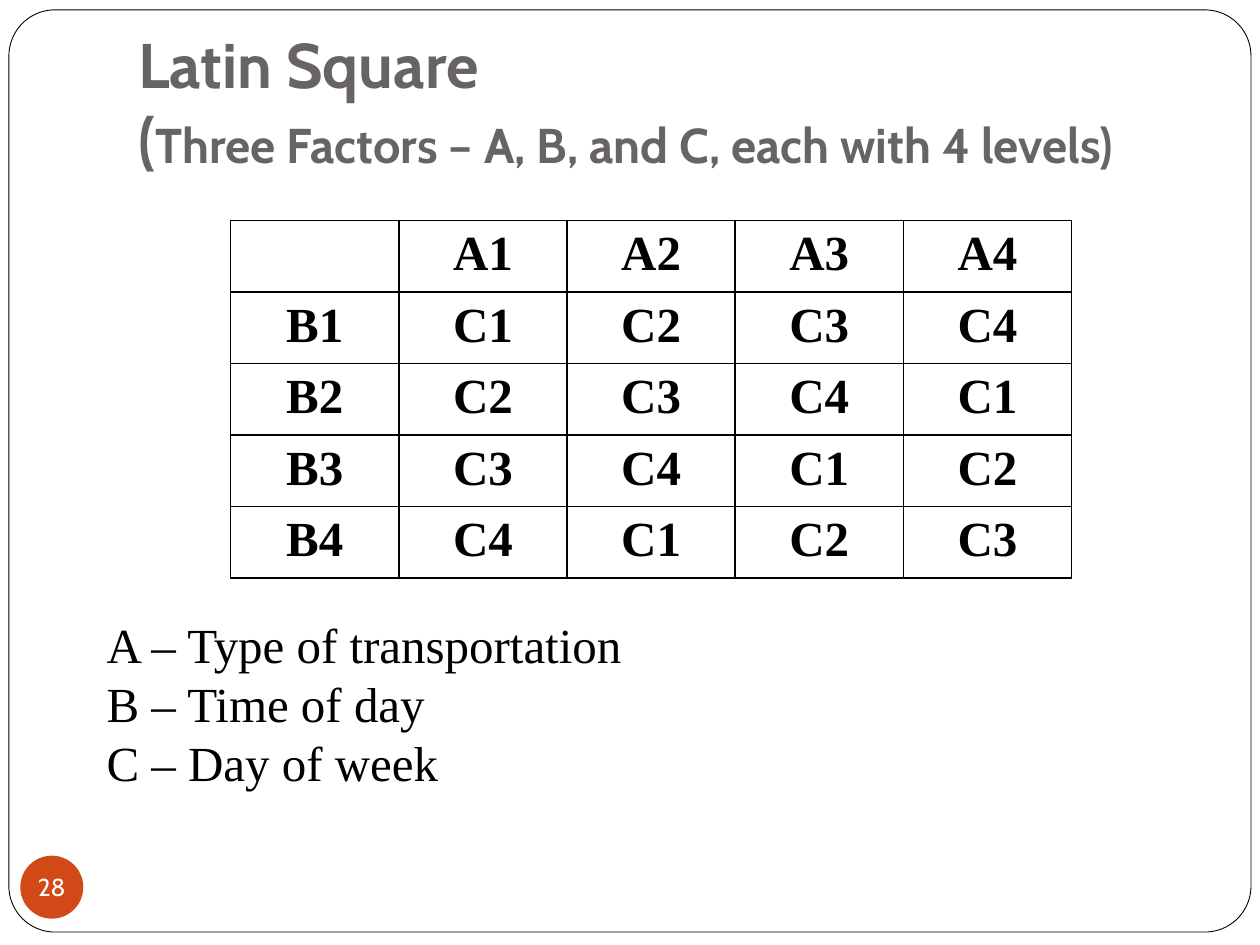
"""Build a slide that shows a Latin square for three factors with four levels each."""
from dataclasses import dataclass

from lxml.etree import SubElement
from pptx import Presentation
from pptx.dml.color import RGBColor as Color
from pptx.enum.shapes import MSO_SHAPE as Shape
from pptx.enum.text import MSO_ANCHOR as Anchor, PP_ALIGN as Align
from pptx.oxml.ns import qn
from pptx.util import Cm, Pt

LEVELS = 4
HEADING = [[("Latin Square\n(", 36), ("Three Factors – A, B, and C, each with 4 levels)", 27.9)]]
FACTORS = ["A – Type of transportation", "B – Time of day", "C – Day of week"]
PAGE_NUMBER = "28"


@dataclass(frozen=True)
class Theme:
    """Colours, fonts and type sizes of the slide."""
    paper: str = "FFFFFF"
    ink: str = "000000"
    title: str = "696464"
    accent: str = "D34817"
    sans: str = "Cabin"
    serif: str = "Times New Roman"
    body: float = 28
    number: float = 14


THEME = Theme()


def latin_square(levels):
    """Return the table rows, each shifted by one level from the row above."""
    header = [""] + [f"A{i + 1}" for i in range(levels)]
    rows = [[f"B{r + 1}"] + [f"C{(r + c) % levels + 1}" for c in range(levels)]
            for r in range(levels)]
    return [header] + rows


def write(frame, paragraphs, *, font, color, bold=False, align=Align.LEFT,
          anchor=Anchor.TOP, wrap=True, margins=None):
    """Fill a text frame with paragraphs made of (text, size) spans."""
    frame.word_wrap = wrap
    frame.vertical_anchor = anchor
    if margins:
        frame.margin_left, frame.margin_top, frame.margin_right, frame.margin_bottom = map(Cm, margins)
    for index, spans in enumerate(paragraphs):
        para = frame.add_paragraph() if index else frame.paragraphs[0]
        para.alignment = align
        for text, size in spans:
            for number, line in enumerate(text.split("\n")):
                if number:
                    para.add_line_break()
                span = para.add_run()
                span.text = line
                span.font.name, span.font.size, span.font.bold = font, Pt(size), bold
                span.font.color.rgb = Color.from_string(color)


def add_box(page, left, top, width, height):
    """Add a text box placed in centimetres."""
    return page.shapes.add_textbox(Cm(left), Cm(top), Cm(width), Cm(height))


def add_panel(page, kind, left, top, width, height, fill, line=None):
    """Add a flat filled shape with an optional outline."""
    panel = page.shapes.add_shape(kind, Cm(left), Cm(top), Cm(width), Cm(height))
    panel.shadow.inherit = False
    panel.fill.solid()
    panel.fill.fore_color.rgb = Color.from_string(fill)
    if line:
        panel.line.color.rgb = Color.from_string(line)
        panel.line.width = Pt(0.5)
    else:
        panel.line.fill.background()
    return panel


def add_borders(cell, color, width):
    """Draw a solid line on the four sides of a table cell."""
    properties = cell._tc.get_or_add_tcPr()
    for side in ("lnL", "lnR", "lnT", "lnB"):
        line = SubElement(properties, qn(f"a:{side}"), w=str(Pt(width)))
        SubElement(SubElement(line, qn("a:solidFill")), qn("a:srgbClr"), val=color)


def add_grid(page, rows, left, top, column, row):
    """Add a bordered table with equal columns and equal rows."""
    count = len(rows)
    table = page.shapes.add_table(count, count, Cm(left), Cm(top),
                                  Cm(column * count), Cm(row * count)).table
    table.first_row = table.horz_banding = False
    for r, labels in enumerate(rows):
        for c, label in enumerate(labels):
            cell = table.cell(r, c)
            add_borders(cell, THEME.ink, 1)
            cell.fill.background()
            if label:
                write(cell.text_frame, [[(label, THEME.body)]], font=THEME.serif,
                      color=THEME.ink, bold=True, align=Align.CENTER)


def main():
    """Place every part on the slide and save the deck."""
    deck = Presentation()
    deck.slide_width, deck.slide_height = Cm(25.4), Cm(19.05)
    page = deck.slides.add_slide(deck.slide_layouts[6])

    border = add_panel(page, Shape.ROUNDED_RECTANGLE, 0.18, 0.2, 25.04, 18.59,
                       THEME.paper, THEME.ink)
    border.adjustments[0] = 0.05

    heading = add_box(page, 2.54, 0.76, 21.59, 3.05)
    write(heading.text_frame, HEADING, font=THEME.sans, color=THEME.title, bold=True,
          anchor=Anchor.BOTTOM, margins=(0.25, 0.13, 0.25, 0.25))

    add_grid(page, latin_square(LEVELS), 4.65, 4.45, 3.39, 1.32)

    legend = add_box(page, 1.9, 12.27, 16.71, 3.84)
    write(legend.text_frame, [[(factor, THEME.body)] for factor in FACTORS],
          font=THEME.serif, color=THEME.ink)

    badge = add_panel(page, Shape.OVAL, 0.41, 17.25, 1.27, 1.27, THEME.accent)
    write(badge.text_frame, [[(PAGE_NUMBER, THEME.number)]], font=THEME.sans,
          color=THEME.paper, align=Align.CENTER, anchor=Anchor.MIDDLE, wrap=False,
          margins=(0, 0, 0, 0))

    deck.save("out.pptx")


if __name__ == "__main__":
    main()
